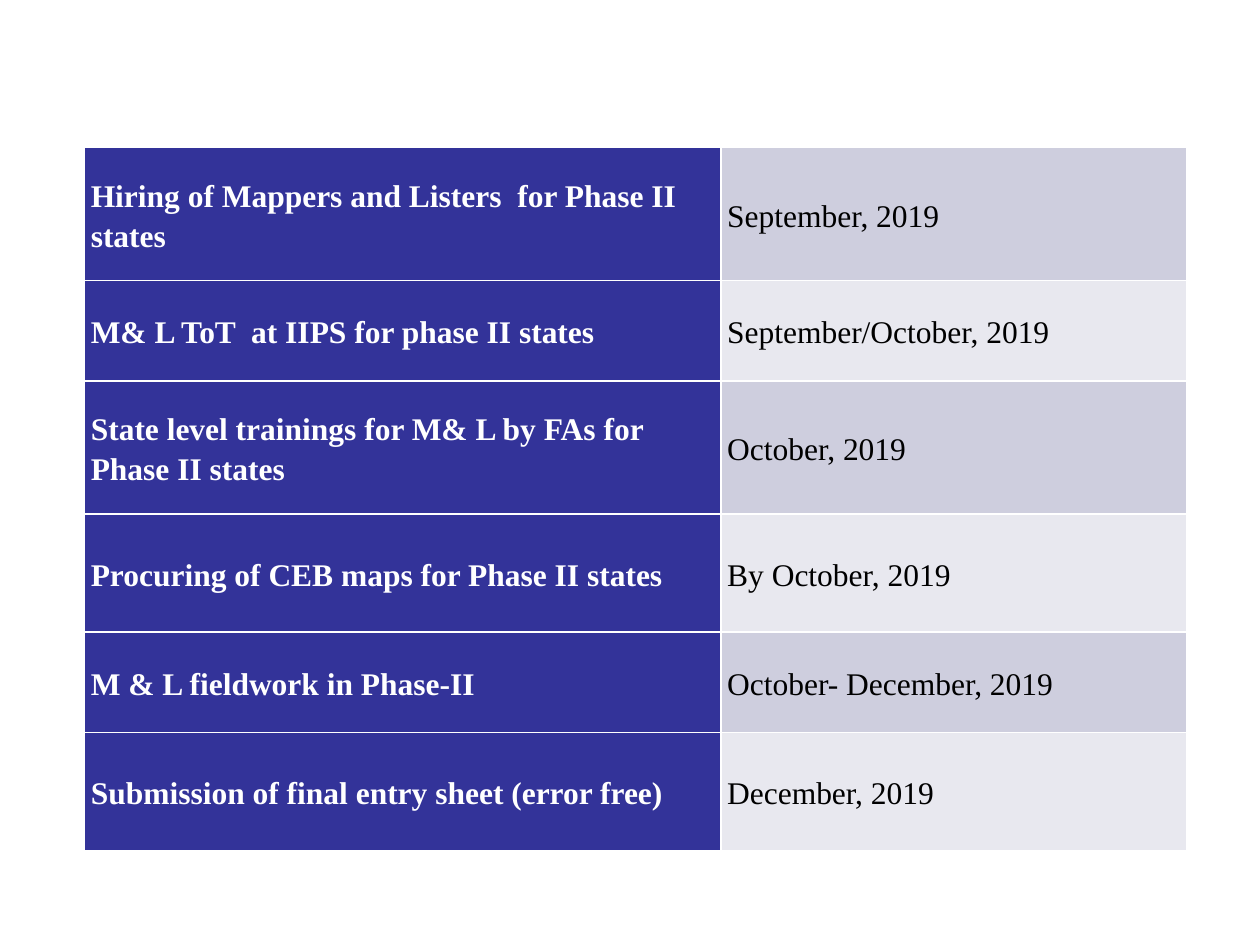
from lxml import etree
from pptx import Presentation
from pptx import util as u
from pptx.dml import color
from pptx.enum import text
from pptx.oxml import ns

FONT = "Times New Roman"
COLUMN_WIDTHS = (12.83, 9.4)
TASK_FILL = "333399"
DATE_FILLS = ("CECEDE", "E8E8EF")
SCHEDULE = (
    ("Hiring of Mappers and Listers  for Phase II states", "September, 2019", 2.68),
    ("M& L ToT  at IIPS for phase II states", "September/October, 2019", 2.03),
    ("State level trainings for M& L by FAs for Phase II states", "October, 2019", 2.68),
    ("Procuring of CEB maps for Phase II states", "By October, 2019", 2.38),
    ("M & L fieldwork in Phase-II", "October- December, 2019", 2.03),
    ("Submission of final entry sheet (error free)", "December, 2019", 2.38),
)


def rgb(value):
    return color.RGBColor.from_string(value)


def set_borders(cell, value, width):
    properties = cell._tc.get_or_add_tcPr()
    for index, side in enumerate(("lnL", "lnR", "lnT", "lnB")):
        line = etree.Element(ns.qn(f"a:{side}"), w=str(u.Pt(width)))
        fill = etree.SubElement(line, ns.qn("a:solidFill"))
        etree.SubElement(fill, ns.qn("a:srgbClr"), val=value)
        properties.insert(index, line)


def fill_cell(cell, wording, fill, font_color, bold):
    cell.fill.solid()
    cell.fill.fore_color.rgb = rgb(fill)
    cell.margin_left = cell.margin_right = u.Cm(0.13)
    cell.margin_top = cell.margin_bottom = 0
    cell.vertical_anchor = text.MSO_ANCHOR.MIDDLE
    paragraph = cell.text_frame.paragraphs[0]
    paragraph.line_spacing = 1.15
    run = paragraph.add_run()
    run.text = wording
    run.font.name = FONT
    run.font.size = u.Pt(18)
    run.font.bold = bold
    run.font.color.rgb = rgb(font_color)
    set_borders(cell, "FFFFFF", 1)


def add_schedule(slide):
    height = sum(row_height for _, _, row_height in SCHEDULE)
    table = slide.shapes.add_table(
        len(SCHEDULE), len(COLUMN_WIDTHS),
        u.Cm(1.7), u.Cm(2.97), u.Cm(sum(COLUMN_WIDTHS)), u.Cm(height),
    ).table
    table.first_row = False
    table.first_col = True
    for column, width in zip(table.columns, COLUMN_WIDTHS):
        column.width = u.Cm(width)
    for index, (task, date, row_height) in enumerate(SCHEDULE):
        table.rows[index].height = u.Cm(row_height)
        fill_cell(table.cell(index, 0), task, TASK_FILL, "FFFFFF", True)
        fill_cell(table.cell(index, 1), date, DATE_FILLS[index % 2], "000000", False)


def main():
    presentation = Presentation()
    presentation.slide_width = u.Cm(25.4)
    presentation.slide_height = u.Cm(19.05)
    slide = presentation.slides.add_slide(presentation.slide_layouts[6])
    add_schedule(slide)
    presentation.save("out.pptx")


if __name__ == "__main__":
    main()
